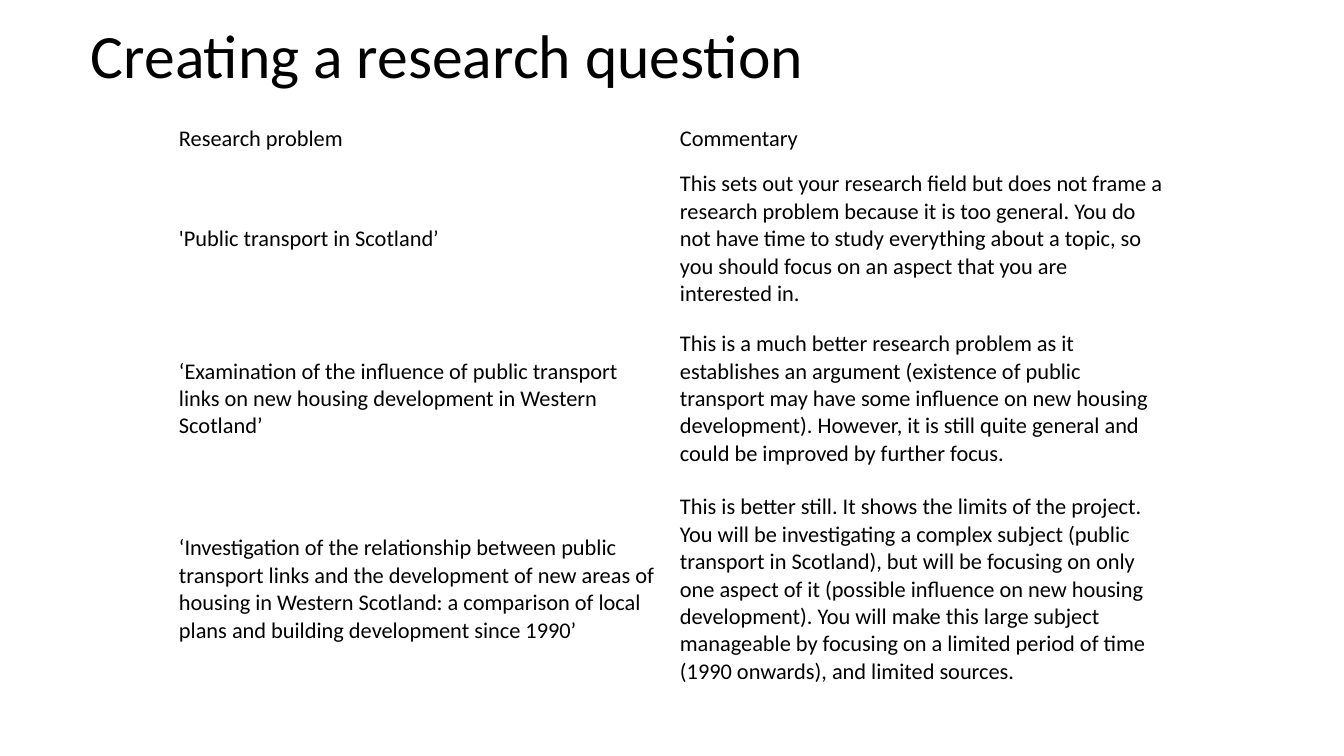
from pptx import Presentation
from pptx.dml.color import RGBColor
from pptx.enum.text import MSO_ANCHOR
from pptx.util import Pt

EMU_PER_PX = 914400 / 100.8

ROWS = [
    ("Research problem", "Commentary"),
    ("'Public transport in Scotland’",
     "This sets out your research field but does not frame a research problem "
     "because it is too general. You do not have time to study everything about "
     "a topic, so you should focus on an aspect that you are interested in."),
    ("‘Examination of the influence of public transport links on new housing "
     "development in Western Scotland’",
     "This is a much better research problem as it establishes an argument "
     "(existence of public transport may have some influence on new housing "
     "development). However, it is still quite general and could be improved "
     "by further focus."),
    ("‘Investigation of the relationship between public transport links and the "
     "development of new areas of housing in Western Scotland: a comparison of "
     "local plans and building development since 1990’",
     "This is better still. It shows the limits of the project. You will be "
     "investigating a complex subject (public transport in Scotland), but will "
     "be focusing on only one aspect of it (possible influence on new housing "
     "development). You will make this large subject manageable by focusing on "
     "a limited period of time (1990 onwards), and limited sources."),
]
ROW_HEIGHTS = [40, 160, 160, 221]


def px(length):
    return round(length * EMU_PER_PX)


def color(code):
    return RGBColor.from_string(code)


class Page:
    """Style and current slide, with a method for each kind of element."""

    font = "Calibri"
    ink = "000000"

    def __init__(self, deck):
        self.slide = deck.slides.add_slide(deck.slide_layouts[6])

    def set_text(self, frame, text, size, spacing=None):
        para = frame.paragraphs[0]
        para.text = text
        para.line_spacing = spacing
        para.font.name = self.font
        para.font.size = Pt(size)
        para.font.color.rgb = color(self.ink)

    def title(self, left, top, width, height, text):
        box = self.slide.shapes.add_textbox(px(left), px(top), px(width), px(height))
        frame = box.text_frame
        frame.word_wrap = True
        frame.vertical_anchor = MSO_ANCHOR.MIDDLE
        self.set_text(frame, text, 44, 0.9)

    def table(self, left, top, column_width, row_heights, rows):
        columns = len(rows[0])
        table = self.slide.shapes.add_table(
            len(rows), columns, px(left), px(top),
            px(column_width * columns), px(sum(row_heights))).table
        table.first_row = table.horz_banding = False
        for column in table.columns:
            column.width = px(column_width)
        for row, height, texts in zip(table.rows, row_heights, rows):
            row.height = px(height)
            for cell, text in zip(row.cells, texts):
                cell.fill.background()
                cell.vertical_anchor = MSO_ANCHOR.MIDDLE
                cell.margin_left = cell.margin_right = px(9)
                cell.margin_top = cell.margin_bottom = px(4)
                self.set_text(cell.text_frame, text, 16)


def main():
    deck = Presentation()
    deck.slide_width, deck.slide_height = px(1344), px(756)
    page = Page(deck)

    # Heading
    page.title(81, 13, 1159, 91, "Creating a research question")

    # Research problems with commentary
    page.table(170, 119, 501, ROW_HEIGHTS, ROWS)

    deck.save("out.pptx")


if __name__ == "__main__":
    main()
